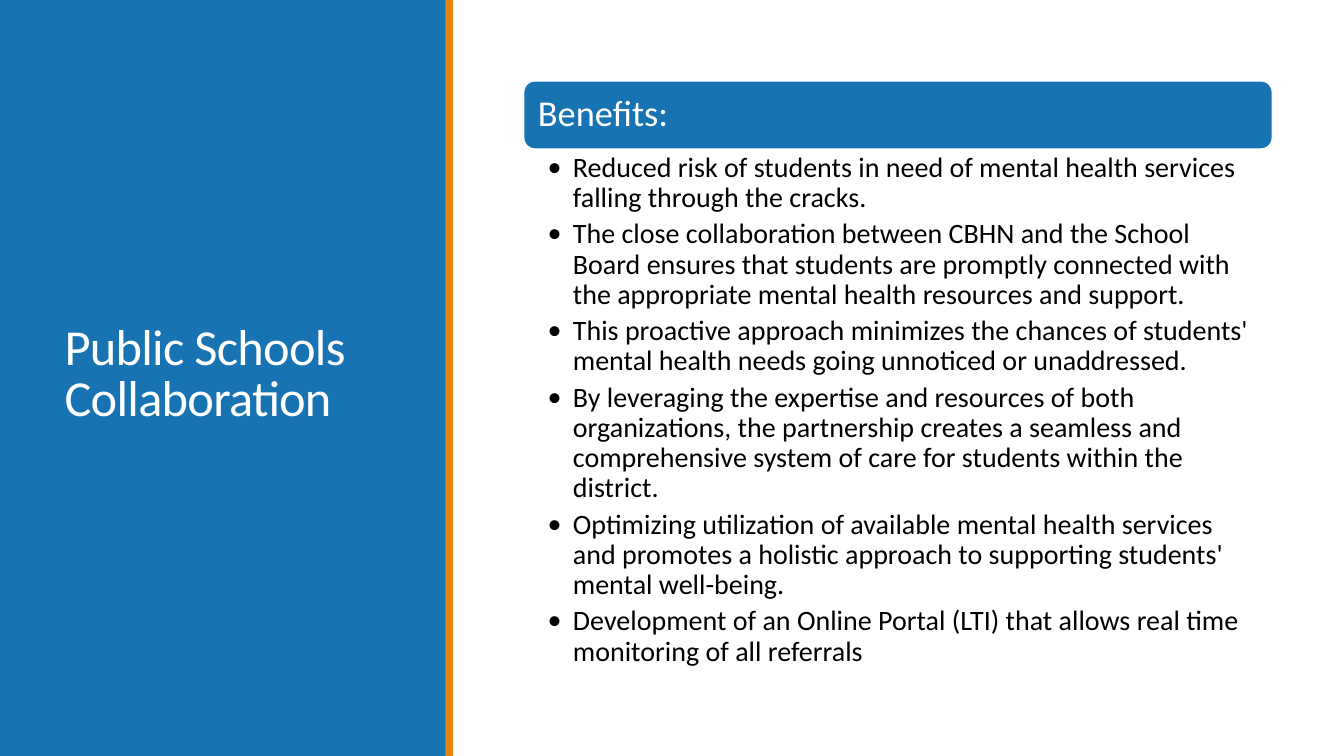
"""Build the slide on the benefits of the public schools collaboration."""
from lxml.etree import SubElement
from pptx import Presentation
from pptx.dml.color import RGBColor
from pptx.enum.shapes import MSO_SHAPE
from pptx.enum.text import MSO_ANCHOR, MSO_AUTO_SIZE, PP_ALIGN
from pptx.oxml.ns import qn
from pptx.util import Inches, Pt

COLORS = {"blue": "1773B1", "orange": "E48312", "white": "FFFFFF", "black": "000000"}
FONT = "Calibri"
WIDE, HIGH = Inches(13.33), Inches(7.5)
LEFT, SPAN = 38.95, 55.73
HEAD_TOP, HEAD_HIGH = 10.67, 9.07
BENEFITS = [
    "Reduced risk of students in need of mental health services falling through the cracks.",
    "The close collaboration between CBHN and the School Board ensures that students are "
    "promptly connected with the appropriate mental health resources and support.",
    "This proactive approach minimizes the chances of students' mental health needs going "
    "unnoticed or unaddressed.",
    "By leveraging the expertise and resources of both organizations, the partnership creates "
    "a seamless and comprehensive system of care for students within the district.",
    "Optimizing utilization of available mental health services and promotes a holistic "
    "approach to supporting students' mental well-being.",
    "Development of an Online Portal (LTI) that allows real time monitoring of all referrals",
]


class Deck:
    """Hold the style and the slide; places are percent shares of its size."""

    def __init__(self):
        self.show = Presentation()
        self.show.slide_width, self.show.slide_height = WIDE, HIGH
        self.slide = self.show.slides.add_slide(self.show.slide_layouts[1])

    def box(self, left, top, width, height):
        return [int(size * share / 100) for size, share in
                ((WIDE, left), (HIGH, top), (WIDE, width), (HIGH, height))]

    def place(self, shape, area):
        shape.left, shape.top, shape.width, shape.height = self.box(*area)

    def label(self, shape, text, size, color, leading, insets, anchor, after=0):
        frame = shape.text_frame
        frame.text = text
        frame.word_wrap = True
        frame.auto_size = MSO_AUTO_SIZE.NONE
        frame.vertical_anchor = anchor
        (frame.margin_left, frame.margin_top,
         frame.margin_right, frame.margin_bottom) = map(Inches, insets)
        for para in frame.paragraphs:
            para.alignment = PP_ALIGN.LEFT
            para.line_spacing = leading
            para.space_before, para.space_after = Pt(0), Pt(after)
            for run in para.runs:
                run.font.name, run.font.size = FONT, Pt(size)
                run.font.color.rgb = RGBColor.from_string(COLORS[color])

    def panel(self, area, color, kind=MSO_SHAPE.RECTANGLE):
        shape = self.slide.shapes.add_shape(kind, *self.box(*area))
        shape.shadow.inherit = False
        shape.fill.solid()
        shape.fill.fore_color.rgb = RGBColor.from_string(COLORS[color])
        shape.line.fill.background()
        return shape

    def back(self, area, color):
        self.slide.shapes._spTree.insert(2, self.panel(area, color)._element)

    def title(self, area, text):
        shape = self.slide.shapes.title
        self.place(shape, area)
        self.label(shape, text, 36, "white", 0.85, (0.1, 0.05, 0.1, 0.05), MSO_ANCHOR.MIDDLE)
        for run in shape.text_frame.paragraphs[0].runs:
            run.font._element.set("spc", "-50")

    def header(self, area, text):
        shape = self.panel(area, "blue", MSO_SHAPE.ROUNDED_RECTANGLE)
        shape.line.color.rgb = RGBColor.from_string(COLORS["white"])
        shape.line.width = Pt(1.25)
        self.label(shape, text, 26, "white", 0.9, (0.11, 0.11, 0.11, 0.11), MSO_ANCHOR.MIDDLE)

    def bullets(self, area, items):
        shape = self.slide.placeholders[1]
        self.place(shape, area)
        self.label(shape, "\n".join(items), 20, "black", 0.9,
                   (0.24, 0.04, 0.2, 0.04), MSO_ANCHOR.TOP, after=4.3)
        for para in shape.text_frame.paragraphs:
            props = para._p.get_or_add_pPr()
            props.set("marL", str(Inches(0.25)))
            props.set("indent", str(Inches(-0.25)))
            SubElement(props, qn("a:buFont")).set("typeface", FONT)
            SubElement(props, qn("a:buChar")).set("char", "•")


def main():
    deck = Deck()
    deck.back((33.15, 0, 0.55, 100), "orange")
    deck.back((0, 0, 33.25, 100), "blue")
    deck.title((4.05, 7.6, 25.3, 84.13), "Public Schools Collaboration")
    deck.header((LEFT, HEAD_TOP, SPAN, HEAD_HIGH), "Benefits:")
    deck.bullets((LEFT, HEAD_TOP + HEAD_HIGH, SPAN, 70.67), BENEFITS)
    deck.show.save("out.pptx")


if __name__ == "__main__":
    main()
